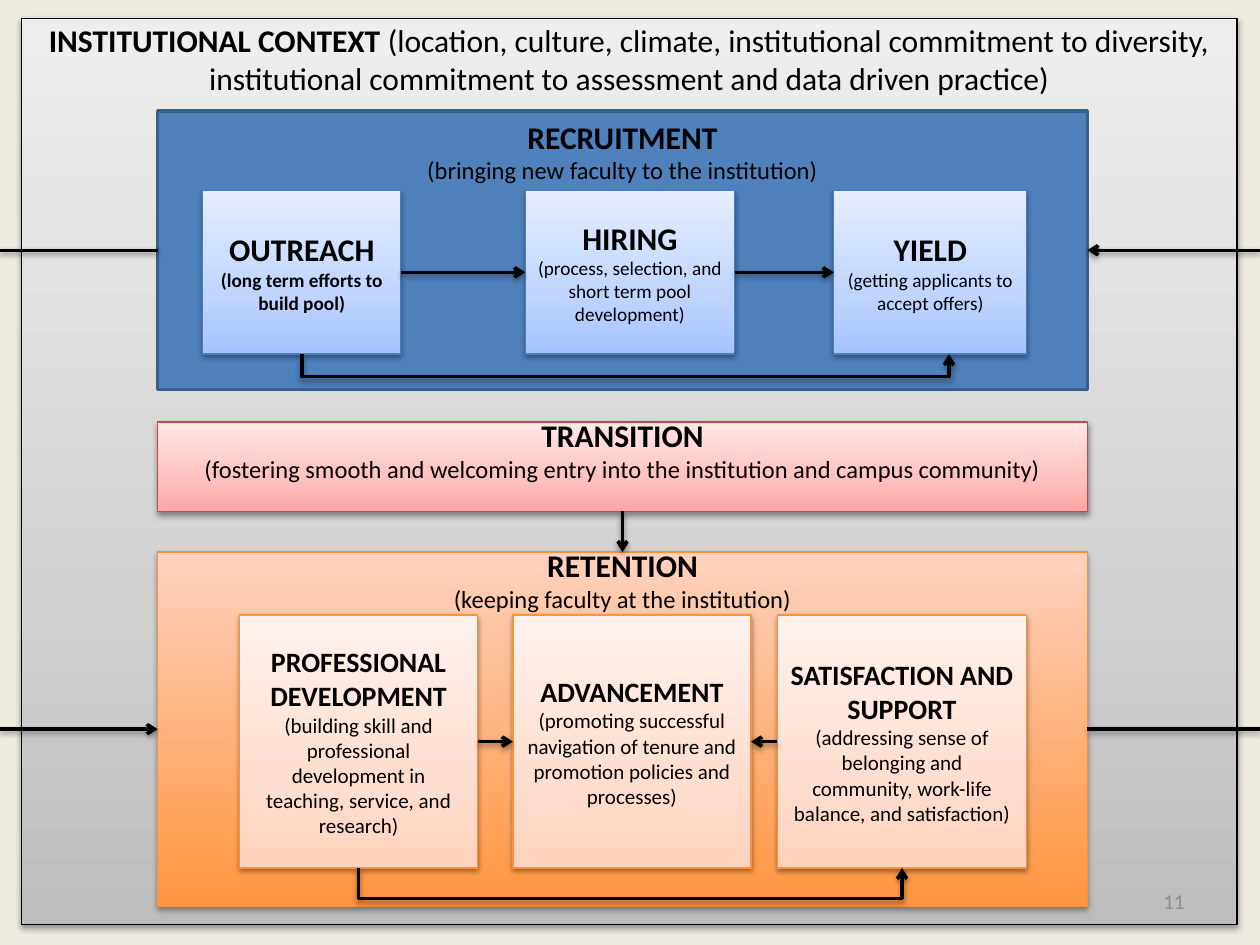
from dataclasses import dataclass

from lxml import etree
from pptx import Presentation
from pptx import util as u
from pptx.dml.color import RGBColor
from pptx.enum import shapes, text
from pptx.oxml import ns

BLACK = RGBColor(0, 0, 0)
GREY = RGBColor(0x8C, 0x8C, 0x8C)
CREAM = RGBColor(0xEE, 0xEC, 0xE1)
BLUE = RGBColor(0x4F, 0x81, 0xBD)
BLUE_EDGE = RGBColor(0x3A, 0x5F, 0x8C)
CARD_BLUE_EDGE = RGBColor(0x4B, 0x7E, 0xBC)
RED_EDGE = RGBColor(0xBF, 0x4C, 0x48)
ORANGE_EDGE = RGBColor(0xF6, 0x92, 0x40)


def shade(*stops: tuple[float, str]) -> list[tuple[float, RGBColor]]:
    """Gradient stops, from the bottom of a box to its top."""
    return [(position, RGBColor.from_string(code)) for position, code in stops]


FRAME_SHADE = shade((0, "BDBDBD"), (0.35, "D1D1D1"), (1, "EEEEEE"))
ORANGE_SHADE = shade((0, "FF953E"), (1, "FFD2BD"))
PEACH_SHADE = shade((0, "FFD2BD"), (0.35, "FFDED0"), (1, "FFF2ED"))
BLUE_SHADE = shade((0, "A4C4FF"), (0.35, "BFD4FF"), (1, "E6EEFF"))
RED_SHADE = shade((0, "FFA6A5"), (0.35, "FFC0BF"), (1, "FFE7E7"))

SLIDE_WIDTH = 25.4


@dataclass(frozen=True)
class Box:
    """A stage of the process; lengths in cm."""
    heading: str
    detail: str
    left: float
    top: float
    width: float
    height: float
    fill: RGBColor | list
    edge: RGBColor
    sizes: tuple[int, int]
    edge_width: float = 0.75
    detail_bold: bool = False
    text_middle: float | None = None  # below the top, when not centred

    @property
    def right(self) -> float:
        return self.left + self.width

    @property
    def bottom(self) -> float:
        return self.top + self.height

    @property
    def center(self) -> float:
        return self.left + self.width / 2

    @property
    def middle(self) -> float:
        return self.top + self.height / 2


def band(heading, detail, top, height, fill, edge, text_middle, edge_width=0.75) -> Box:
    return Box(heading, detail, 3.18, top, 18.74, height, fill, edge, (18, 14),
               edge_width, text_middle=text_middle)


def pool_card(heading, detail, left, width, detail_bold=False) -> Box:
    return Box(heading, detail, left, 3.84, width, 3.3, BLUE_SHADE, CARD_BLUE_EDGE,
               (18, 11), detail_bold=detail_bold)


def support_card(heading, detail, left, width) -> Box:
    return Box(heading, detail, left, 12.4, width, 5.1, PEACH_SHADE, ORANGE_EDGE, (16, 12))


RECRUITMENT = band("RECRUITMENT", "(bringing new faculty to the institution)",
                   2.24, 5.61, BLUE, BLUE_EDGE, 0.81, 2)
TRANSITION = band("TRANSITION",
                  "(fostering smooth and welcoming entry into the institution and campus community)",
                  8.51, 1.8, RED_SHADE, RED_EDGE, 0.56)
RETENTION = band("RETENTION", "(keeping faculty at the institution)",
                 11.13, 7.14, ORANGE_SHADE, ORANGE_EDGE, 0.56)
OUTREACH = pool_card("OUTREACH", "(long term efforts to build pool)", 4.09, 3.99, True)
HIRING = pool_card("HIRING", "(process, selection, and short term pool development)", 10.59, 4.22)
YIELD = pool_card("YIELD", "(getting applicants to accept offers)", 16.81, 3.89)
DEVELOPMENT = support_card(
    "PROFESSIONAL DEVELOPMENT",
    "(building skill and professional development in teaching, service, and research)", 4.83, 4.8)
ADVANCEMENT = support_card(
    "ADVANCEMENT",
    "(promoting successful navigation of tenure and promotion policies and processes)", 10.34, 4.8)
SATISFACTION = support_card(
    "SATISFACTION AND SUPPORT",
    "(addressing sense of belonging and community, work-life balance, and satisfaction)",
    15.67, 5.03)
BOXES = [RETENTION, RECRUITMENT, TRANSITION, DEVELOPMENT, ADVANCEMENT, SATISFACTION,
         OUTREACH, HIRING, YIELD]


def add_shadow(shape, visible: bool = True) -> None:
    """Put the effect list after the line, which must be set already."""
    effects = etree.SubElement(shape._element.spPr, ns.qn("a:effectLst"))
    if visible:
        outer = etree.SubElement(effects, ns.qn("a:outerShdw"), blurRad="40000",
                                 dist="20000", dir="5400000", rotWithShape="0")
        color = etree.SubElement(outer, ns.qn("a:srgbClr"), val=str(BLACK))
        etree.SubElement(color, ns.qn("a:alpha"), val="38000")


def paint(shape, fill: RGBColor | list, edge: RGBColor, edge_width: float) -> None:
    if isinstance(fill, list):
        shape.fill.gradient()
        shape.fill.gradient_angle = 90
        stop_list = shape._element.spPr.find(".//" + ns.qn("a:gsLst"))
        if len(fill) == 3:
            etree.SubElement(stop_list, ns.qn("a:gs"), pos="100000")
        for stop, (position, color) in zip(shape.fill.gradient_stops, fill):
            stop.position = position
            stop.color.rgb = color
    else:
        shape.fill.solid()
        shape.fill.fore_color.rgb = fill
    shape.line.color.rgb = edge
    shape.line.width = u.Pt(edge_width)
    add_shadow(shape, isinstance(fill, list))


def write(paragraph, words: str, size: int, bold=False, color=BLACK,
          align=text.PP_ALIGN.CENTER) -> None:
    paragraph.alignment = align
    run = paragraph.add_run()
    run.text = words
    run.font.color.rgb = color
    for name, value in {"name": "Calibri", "size": u.Pt(size), "bold": bold}.items():
        setattr(run.font, name, value)


def format_frame(frame, **values) -> None:
    defaults = {"word_wrap": True, "auto_size": text.MSO_AUTO_SIZE.NONE,
                "vertical_anchor": text.MSO_ANCHOR.MIDDLE}
    for name, value in (defaults | values).items():
        setattr(frame, name, value)


def draw_box(slide, box: Box) -> None:
    shape = slide.shapes.add_shape(
        shapes.MSO_SHAPE.RECTANGLE, *map(u.Cm, (box.left, box.top, box.width, box.height)))
    paint(shape, box.fill, box.edge, box.edge_width)
    frame = shape.text_frame
    format_frame(frame)
    if box.text_middle is not None:
        format_frame(frame, margin_top=0, margin_bottom=u.Cm(box.height - 2 * box.text_middle))
    write(frame.paragraphs[0], box.heading, box.sizes[0], True)
    write(frame.add_paragraph(), box.detail, box.sizes[1], box.detail_bold)


def draw_route(slide, *points: tuple[float, float], arrow: bool = True) -> None:
    """A line through the points, in cm, with its arrowhead at the last one."""
    start, *rest = [(u.Cm(x), u.Cm(y)) for x, y in points]
    if len(rest) == 1:
        route = slide.shapes.add_connector(shapes.MSO_CONNECTOR.STRAIGHT, *start, *rest[0])
    else:
        builder = slide.shapes.build_freeform(*start)
        builder.add_line_segments(rest, close=False)
        route = builder.convert_to_shape()
        route.fill.background()
    route.line.color.rgb = BLACK
    route.line.width = u.Pt(2)
    if arrow:
        etree.SubElement(route.line._get_or_add_ln(), ns.qn("a:tailEnd"), type="arrow")
    add_shadow(route)


def draw_context(slide) -> None:
    context = slide.shapes.title
    for name, value in {"left": 0.43, "top": 0.38, "width": 24.51, "height": 18.26}.items():
        setattr(context, name, u.Cm(value))
    paint(context, FRAME_SHADE, BLACK, 0.75)
    format_frame(context.text_frame, vertical_anchor=text.MSO_ANCHOR.TOP, margin_top=u.Cm(0.05))
    line = context.text_frame.paragraphs[0]
    write(line, "INSTITUTIONAL CONTEXT ", 18, True)
    write(line, "(location, culture, climate, institutional commitment to diversity, "
                "institutional commitment to assessment and data driven practice)", 18)


def main() -> None:
    deck = Presentation()
    deck.slide_width, deck.slide_height = u.Cm(SLIDE_WIDTH), u.Cm(19.05)
    slide = deck.slides.add_slide(deck.slide_layouts[5])
    slide.background.fill.solid()
    slide.background.fill.fore_color.rgb = CREAM
    draw_context(slide)
    for box in BOXES:
        draw_box(slide, box)

    for source, target in [(OUTREACH, HIRING), (HIRING, YIELD), (DEVELOPMENT, ADVANCEMENT)]:
        draw_route(slide, (source.right, source.middle), (target.left, target.middle))
    draw_route(slide, (SATISFACTION.left, SATISFACTION.middle),
               (ADVANCEMENT.right, ADVANCEMENT.middle))
    draw_route(slide, (TRANSITION.center, TRANSITION.bottom), (RETENTION.center, RETENTION.top))
    for source, target, end, drop in [(OUTREACH, YIELD, 19.13, 0.45),
                                      (DEVELOPMENT, SATISFACTION, SATISFACTION.center, 0.61)]:
        low = source.bottom + drop
        draw_route(slide, (source.center, source.bottom), (source.center, low),
                   (end, low), (end, target.bottom))
    for stage, arrow_left in [(RECRUITMENT, False), (RETENTION, True)]:
        draw_route(slide, (0, stage.middle), (stage.left, stage.middle), arrow=arrow_left)
        draw_route(slide, (SLIDE_WIDTH, stage.middle), (stage.right, stage.middle),
                   arrow=not arrow_left)

    number = slide.shapes.add_textbox(*map(u.Cm, (18.21, 17.65, 5.92, 1.02))).text_frame
    format_frame(number)
    write(number.paragraphs[0], "11", 12, color=GREY, align=text.PP_ALIGN.RIGHT)
    deck.save("out.pptx")


if __name__ == "__main__":
    main()
